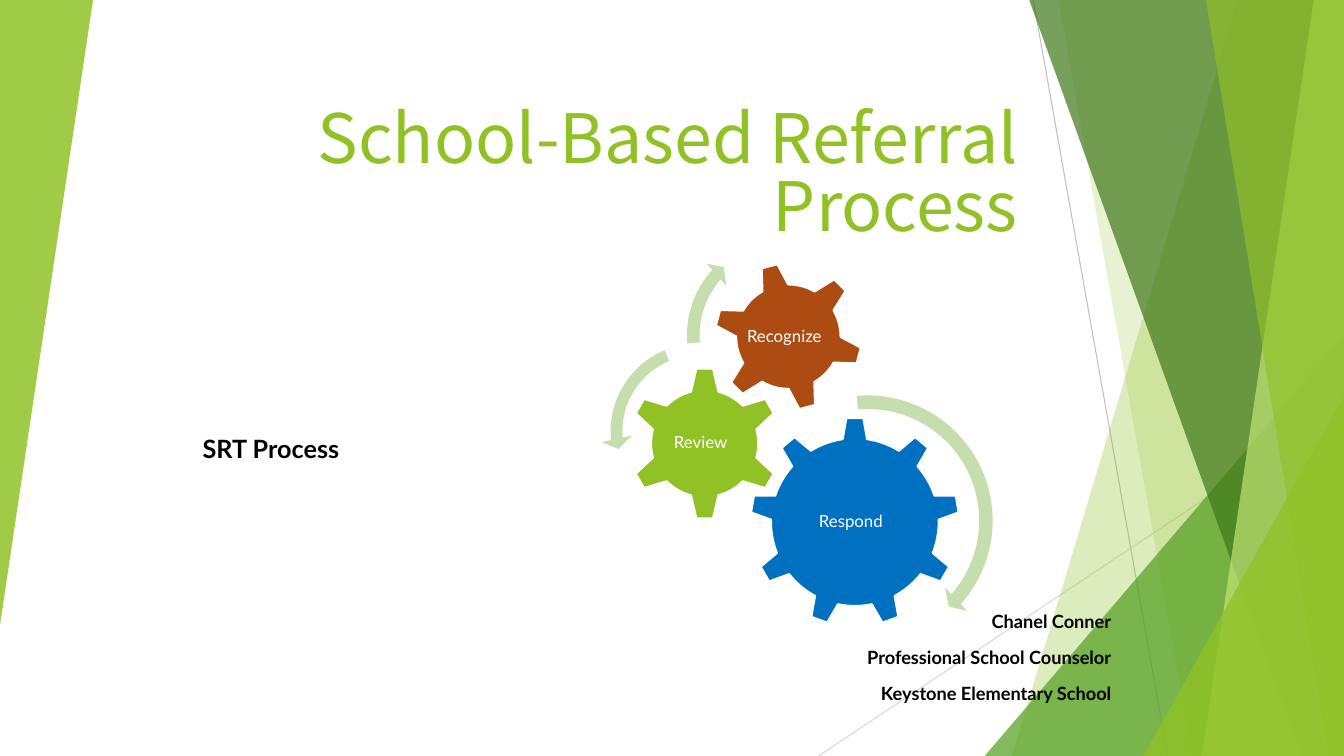
import dataclasses

import lxml.etree
import pptx
import pptx.dml.color
import pptx.enum.shapes
import pptx.enum.text
import pptx.oxml.ns
import pptx.util

SHAPE = pptx.enum.shapes.MSO_SHAPE
ALIGN = pptx.enum.text.PP_ALIGN
ANCHOR = pptx.enum.text.MSO_ANCHOR


@dataclasses.dataclass(frozen=True)
class Theme:
    lime: str = "90C226"
    green: str = "54A021"
    forest: str = "3F7819"
    pale: str = "C0E474"
    sage: str = "C6DDAD"
    blue: str = "0070C0"
    rust: str = "AD4C12"
    grey: str = "BFBFBF"
    mist: str = "D9D9D9"
    white: str = "FFFFFF"
    black: str = "000000"
    head_font: str = "Noto Sans CJK KR"
    body_font: str = "Lato"
    head_size: float = 48.6
    topic_size: float = 18
    name_size: float = 13
    gear_size: float = 12


@dataclasses.dataclass(frozen=True)
class Box:
    left: float
    top: float
    width: float
    height: float

    def point(self, x, y):
        """Turn percentages of this box into slide lengths."""
        return (int(self.left + self.width * x / 100),
                int(self.top + self.height * y / 100))

    def share(self, x, y, w, h):
        """Give the box that covers these percentages of this one."""
        return Box(*self.point(x, y), int(self.width * w / 100),
                   int(self.height * h / 100))

    def middle(self, x, y, w, h):
        """Like share, but x and y mark the centre."""
        return self.share(x - w / 2, y - h / 2, w, h)

    def frame(self):
        return self.left, self.top, self.width, self.height


THEME = Theme()


def tint(name):
    return pptx.dml.color.RGBColor.from_string(name)


def paint(shape, colour, alpha=100, edge=None):
    """Fill a shape, with an outline only if an edge colour is given."""
    shape.shadow.inherit = False
    shape.fill.solid()
    shape.fill.fore_color.rgb = tint(colour)
    if alpha < 100:
        solid = shape.element.spPr.find(pptx.oxml.ns.qn("a:solidFill"))
        lxml.etree.SubElement(solid[0], pptx.oxml.ns.qn("a:alpha"),
                              val=str(alpha * 1000))
    if edge:
        shape.line.color.rgb = tint(edge)
        shape.line.width = pptx.util.Pt(1.5)
    else:
        shape.line.fill.background()


def style(text, font, size, colour, align, bold=False):
    """Format one paragraph and its runs."""
    text.alignment = align
    for run in text.runs:
        run.font.name = font
        run.font.size = pptx.util.Pt(size)
        run.font.color.rgb = tint(colour)
        run.font.bold = bold


def draw_line(slide, box, start, end, colour):
    line = slide.shapes.add_connector(
        pptx.enum.shapes.MSO_CONNECTOR.STRAIGHT,
        *box.point(*start), *box.point(*end))
    line.line.color.rgb = tint(colour)
    line.line.width = pptx.util.Pt(0.75)
    lxml.etree.SubElement(line.element.spPr, pptx.oxml.ns.qn("a:effectLst"))


def draw_sheet(slide, box, top, base):
    """Cover the box from a slanted left edge to its right side."""
    build = slide.shapes.build_freeform(*box.point(top, 0))
    build.add_line_segments([box.point(100, 0), box.point(100, 100),
                             box.point(base, 100)])
    return build.convert_to_shape()


def draw_wedge(slide, box):
    wedge = slide.shapes.add_shape(SHAPE.ISOSCELES_TRIANGLE, *box.frame())
    wedge.adjustments[0] = 1
    return wedge


def draw_facets(slide, box):
    draw_line(slide, box, (76.88, 0), (86.88, 100), THEME.grey)
    draw_line(slide, box, (100, 53.73), (60.9, 100), THEME.mist)
    # A sheet has the x of its top and base; a wedge has its left and top
    # and reaches the lower right corner.
    facets = [
        ("sheet", 92.1, 75.3, THEME.lime, 30),
        ("sheet", 78.75, 88.73, THEME.lime, 20),
        ("wedge", 73.27, 44.4, THEME.green, 72),
        ("sheet", 76.58, 96.83, THEME.forest, 70),
        ("sheet", 97.75, 89.43, THEME.pale, 70),
        ("sheet", 89.73, 98.87, THEME.lime, 65),
        ("wedge", 85.07, 52.4, THEME.lime, 80),
    ]
    for kind, first, second, colour, alpha in facets:
        if kind == "sheet":
            facet = draw_sheet(slide, box, first, second)
        else:
            facet = draw_wedge(slide, box.share(first, second, 100 - first,
                                                100 - second))
        paint(facet, colour, alpha)
    left = draw_wedge(slide, box.share(0, 0, 6.92, 82.67))
    left.rotation = 180
    paint(left, THEME.lime, 85)


def place(slide, holder, box):
    """Move a placeholder to the box and in front of the facets."""
    holder.left, holder.top, holder.width, holder.height = box.frame()
    slide.shapes.element.append(holder.element)
    frame = holder.text_frame
    frame.word_wrap = True
    frame.auto_size = pptx.enum.text.MSO_AUTO_SIZE.NONE
    return frame


def write_title(slide, box):
    frame = place(slide, slide.shapes.title, box)
    frame.vertical_anchor = ANCHOR.BOTTOM
    frame.margin_bottom = 0
    frame.text = "School-Based Referral Process"
    text = frame.paragraphs[0]
    text.line_spacing = 0.83
    style(text, THEME.head_font, THEME.head_size, THEME.lime, ALIGN.RIGHT)


def write_body(slide, box):
    frame = place(slide, slide.placeholders[1], box)
    frame.vertical_anchor = ANCHOR.TOP
    lines = ["SRT Process", "Chanel Conner", "Professional School Counselor",
             "Keystone Elementary School"]
    frame.text = "\n".join(lines)
    topic, *names = frame.paragraphs
    style(topic, THEME.body_font, THEME.topic_size, THEME.black,
          ALIGN.LEFT, True)
    for text in names:
        style(text, THEME.body_font, THEME.name_size, THEME.black,
              ALIGN.RIGHT, True)
    for text, gap in zip(frame.paragraphs, (10, 105, 10, 10)):
        text.space_before = pptx.util.Pt(gap)


def draw_gear(slide, box, kind, name, spot, colour, turn):
    x, y, size = spot
    gear = slide.shapes.add_shape(kind, *box.middle(x, y, size, size).frame())
    gear.rotation = turn
    paint(gear, colour, edge=THEME.white)
    label = slide.shapes.add_textbox(
        *box.middle(x - 1, y, size * 0.6, size * 0.5).frame())
    frame = label.text_frame
    frame.word_wrap = True
    frame.vertical_anchor = ANCHOR.MIDDLE
    frame.margin_left = frame.margin_right = pptx.util.Inches(0.02)
    frame.margin_top = frame.margin_bottom = pptx.util.Inches(0.02)
    frame.text = name
    frame.paragraphs[0].line_spacing = 0.9
    style(frame.paragraphs[0], THEME.body_font, THEME.gear_size, THEME.white,
          ALIGN.CENTER)


def draw_gears(slide, box):
    gears = [
        (SHAPE.GEAR_9, "Respond", (63, 72.5, 52), THEME.blue, 0),
        (SHAPE.GEAR_6, "Review", (25.75, 53, 38), THEME.lime, 0),
        (SHAPE.GEAR_6, "Recognize", (46.5, 26.5, 37), THEME.rust, 345),
    ]
    arrows = [
        (SHAPE.CIRCULAR_ARROW, (66.13, 72.13, 66.75),
         (0.05, 2.99, 24.96, 159.06, 0.06)),
        (SHAPE.LEFT_CIRCULAR_ARROW, (24.25, 50, 48.5),
         (0.06, 4.3, 104.89, 148.38, 0.08)),
        (SHAPE.CIRCULAR_ARROW, (45.38, 26.13, 52.25),
         (0.06, 3.94, 133.14, 105.08, 0.07)),
    ]
    for gear in gears:
        draw_gear(slide, box, *gear)
    for kind, (x, y, size), bends in arrows:
        arrow = slide.shapes.add_shape(
            kind, *box.middle(x, y, size, size).frame())
        for rank, bend in enumerate(bends):
            arrow.adjustments[rank] = bend
        paint(arrow, THEME.sage)


def main():
    deck = pptx.Presentation()
    deck.slide_width = pptx.util.Inches(13.33)
    deck.slide_height = pptx.util.Inches(7.5)
    slide = deck.slides.add_slide(deck.slide_layouts[0])
    page = Box(0, 0, deck.slide_width, deck.slide_height)
    draw_facets(slide, page)
    write_title(slide, page.share(5.18, 15.6, 71.27, 16.8))
    write_body(slide, page.share(14.33, 56.67, 69.09, 38.13))
    draw_gears(slide, page.share(44.71, 30.4, 30, 53.33))
    deck.save("out.pptx")


if __name__ == "__main__":
    main()
